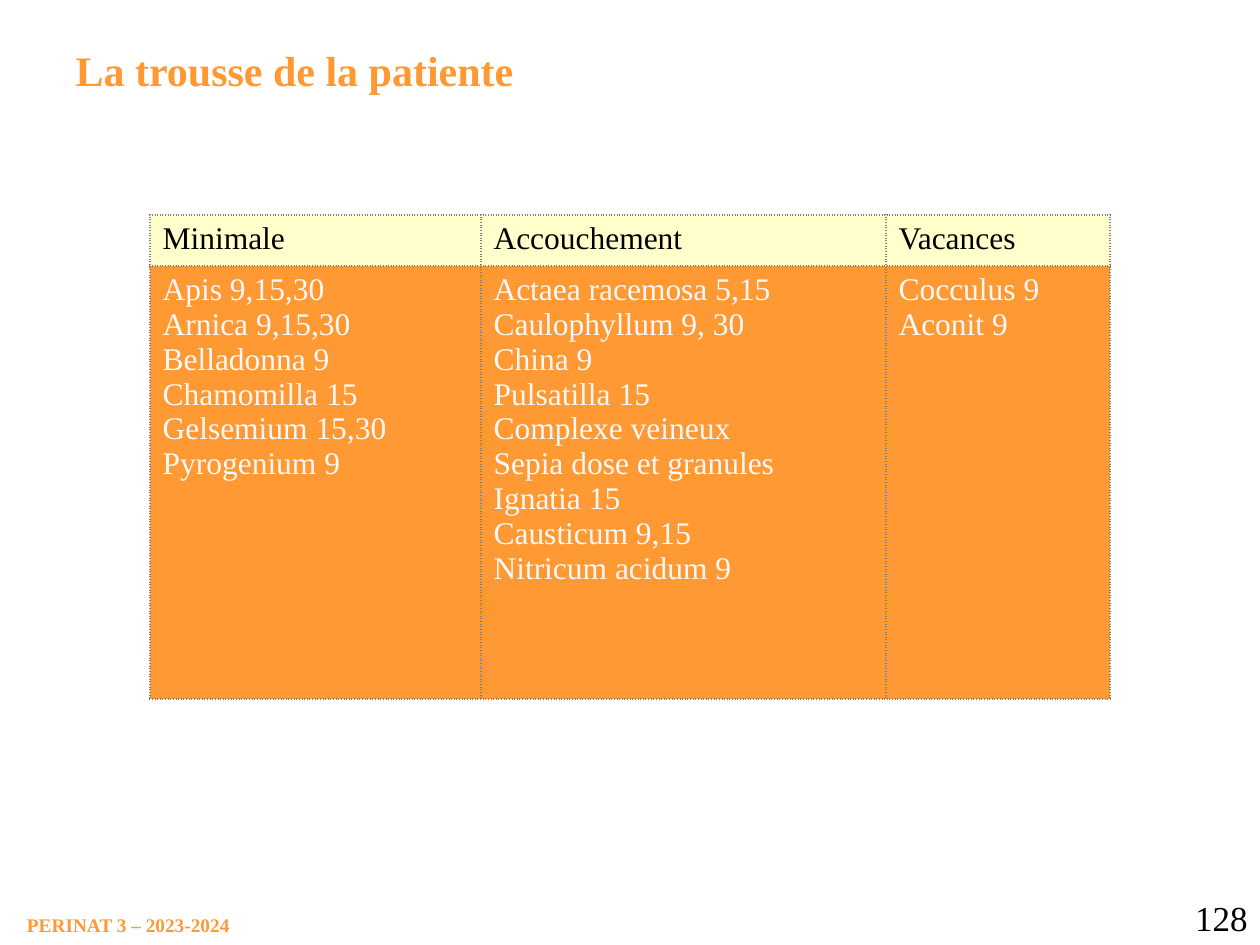
from lxml import etree
from pptx import Presentation
from pptx import util as u
from pptx.dml.color import RGBColor
from pptx.enum import text
from pptx.oxml import ns

TITLE = "La trousse de la patiente"
FOOTER = "PERINAT 3 – 2023-2024"
PAGE_NUMBER = "128"
KITS = [
    ("Minimale", 331, [
        "Apis 9,15,30", "Arnica 9,15,30", "Belladonna 9",
        "Chamomilla 15", "Gelsemium 15,30", "Pyrogenium 9"]),
    ("Accouchement", 405, [
        "Actaea racemosa 5,15", "Caulophyllum 9, 30", "China 9",
        "Pulsatilla 15", "Complexe veineux", "Sepia dose et granules",
        "Ignatia 15", "Causticum 9,15", "Nitricum acidum 9"]),
    ("Vacances", 224, ["Cocculus 9", "Aconit 9"]),
]
ROW_HEIGHTS = [51, 433]

FONT = "Times New Roman"
ORANGE = RGBColor(0xFF, 0x99, 0x33)
CREAM = RGBColor(0xFF, 0xFF, 0xCC)
PALE = RGBColor(0xF8, 0xF8, 0xF8)
BLACK = RGBColor(0, 0, 0)
GREY = RGBColor(0x80, 0x80, 0x80)


def px(length):
    return round(length * 914400 / 126)


def write(frame, lines, size, color, bold=False, align=text.PP_ALIGN.LEFT):
    for index, line in enumerate(lines):
        paragraph = frame.add_paragraph() if index else frame.paragraphs[0]
        paragraph.text = line
        paragraph.alignment = align
        font = paragraph.font
        font.name, font.size, font.bold = FONT, u.Pt(size), bold
        font.color.rgb = color


def add_label(slide, box, label, wrap, **style):
    frame = slide.shapes.add_textbox(*map(px, box)).text_frame
    frame.word_wrap = wrap
    write(frame, [label], **style)
    return frame


def add_borders(cell):
    properties = cell._tc.get_or_add_tcPr()
    for side in ("lnL", "lnR", "lnT", "lnB"):
        line = etree.SubElement(properties, ns.qn("a:" + side), w=str(u.Pt(1)))
        fill = etree.SubElement(line, ns.qn("a:solidFill"))
        etree.SubElement(fill, ns.qn("a:srgbClr"), val=str(GREY))
        etree.SubElement(line, ns.qn("a:prstDash"), val="sysDot")


def fill_cell(cell, lines, fill_color, text_color):
    add_borders(cell)
    cell.fill.solid()
    cell.fill.fore_color.rgb = fill_color
    cell.margin_left = cell.margin_right = u.Inches(0.1)
    cell.margin_top = cell.margin_bottom = u.Inches(0.05)
    write(cell.text_frame, lines, 18, text_color)


def add_kit_table(slide):
    widths = [width for _, width, _ in KITS]
    box = map(px, (150, 215, sum(widths), sum(ROW_HEIGHTS)))
    table = slide.shapes.add_table(len(ROW_HEIGHTS), len(KITS), *box).table
    table.first_row = table.horz_banding = False
    for row, height in zip(table.rows, ROW_HEIGHTS):
        row.height = px(height)
    for index, (heading, width, remedies) in enumerate(KITS):
        table.columns[index].width = px(width)
        fill_cell(table.cell(0, index), [heading], CREAM, BLACK)
        fill_cell(table.cell(1, index), remedies, ORANGE, PALE)


def main():
    presentation = Presentation()
    presentation.slide_width, presentation.slide_height = px(1260), px(945)
    slide = presentation.slides.add_slide(presentation.slide_layouts[5])

    title = slide.shapes.title
    title.left, title.top, title.width, title.height = map(px, (63, 36, 1134, 68))
    title.text_frame.vertical_anchor = text.MSO_ANCHOR.MIDDLE
    write(title.text_frame, [TITLE], 24, ORANGE, bold=True)

    add_kit_table(slide)

    footer = add_label(slide, (27, 913, 207, 24), FOOTER, False,
                       size=11, color=ORANGE, bold=True)
    footer.margin_left = footer.margin_right = 0
    footer.margin_top = footer.margin_bottom = 0
    add_label(slide, (1155, 890, 105, 54), PAGE_NUMBER, True,
              size=20, color=BLACK, align=text.PP_ALIGN.RIGHT)

    presentation.save("out.pptx")


if __name__ == "__main__":
    main()
